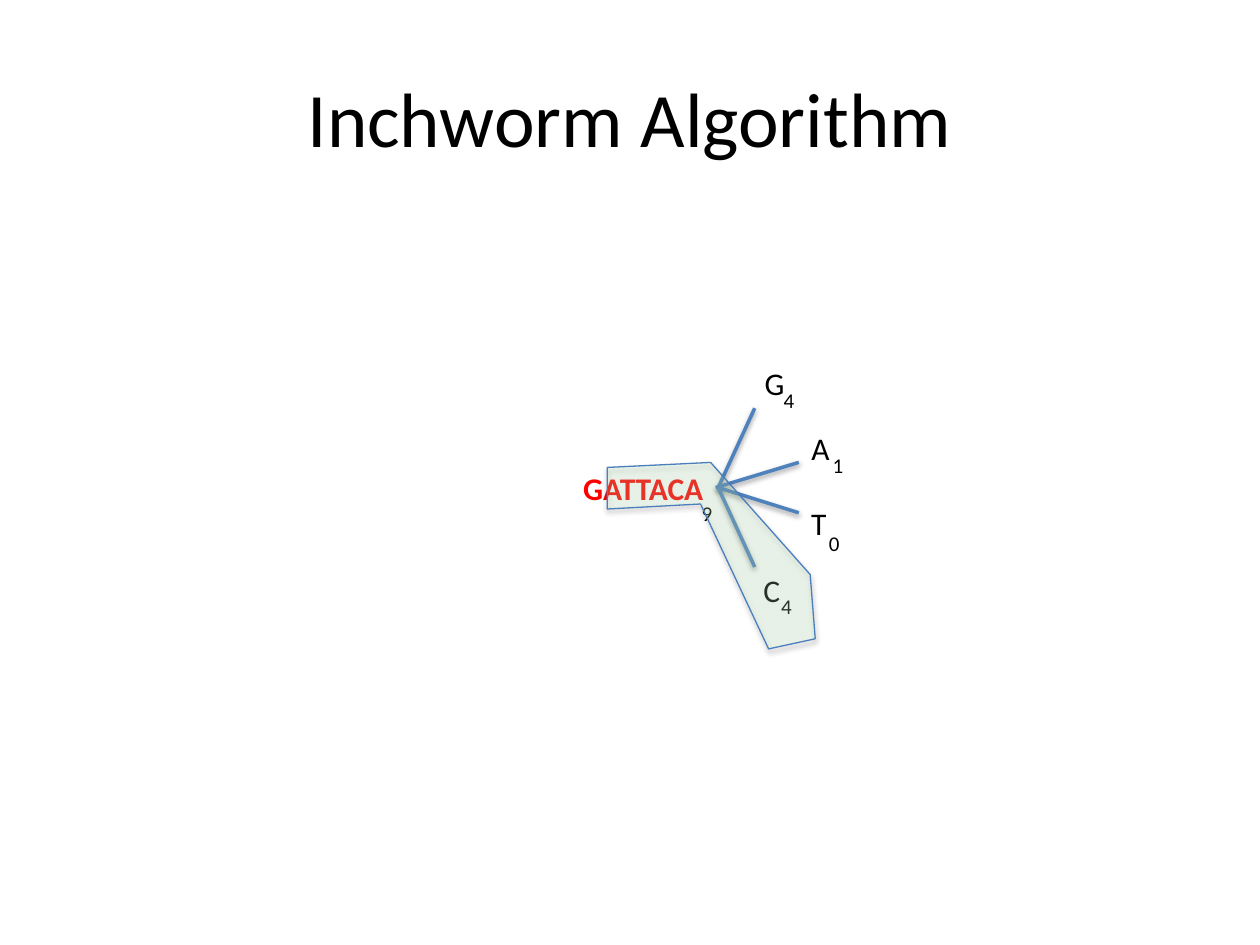
from lxml import etree
from pptx import Presentation
from pptx import util as u
from pptx.dml.color import RGBColor
from pptx.enum import shapes, text
from pptx.oxml.ns import qn

COLORS = {"ink": "000000", "seed": "FF0000", "branch": "4F81BD",
          "path_fill": "CCFFCC", "path_line": "4B7EBC"}
FONT = "Calibri"
TITLE = "Inchworm Algorithm"

BRANCHES = [
    ((5.7, 3.87), (5.99, 3.24)),
    ((5.68, 3.87), (6.34, 3.67)),
    ((5.7, 3.87), (6.34, 4.07)),
    ((5.7, 3.87), (5.99, 4.5)),
]
BASES = [
    ("G", 5.97, 2.84, 0.36),
    ("A", 6.34, 3.36, 0.35),
    ("T", 6.34, 3.95, 0.33),
    ("C", 5.96, 4.48, 0.34),
]
BASE_COUNTS = [("4", 6.12, 3.03), ("1", 6.51, 3.54), ("0", 6.48, 4.16), ("4", 6.1, 4.66)]
SEED = ("GATTACA", 4.53, 3.67, 1.17)
SEED_COUNT = ("9", 5.47, 3.92)
CHOSEN_PATH = [(6.47, 5.07), (6.43, 4.56), (5.64, 3.67), (4.82, 3.71),
               (4.82, 4.04), (5.56, 4), (6.1, 5.15)]


def rgb(name):
    return RGBColor.from_string(COLORS[name])


def add_alpha(color, percent):
    etree.SubElement(color, qn("a:alpha"), val=str(percent * 1000))


def add_shadow(shape, alpha, distance):
    properties = shape._element.spPr
    for old in properties.findall(qn("a:effectLst")):
        properties.remove(old)
    effects = etree.SubElement(properties, qn("a:effectLst"))
    shadow = etree.SubElement(effects, qn("a:outerShdw"), blurRad=str(u.Pt(3.1)),
                              dist=str(u.Pt(distance)), dir="5400000", rotWithShape="0")
    add_alpha(etree.SubElement(shadow, qn("a:srgbClr"), val=COLORS["ink"]), alpha)


def write(frame, wording, size=18, color="ink", bold=False, align=text.PP_ALIGN.LEFT):
    paragraph = frame.paragraphs[0]
    paragraph.alignment = align
    run = paragraph.add_run()
    run.text = wording
    run.font.name = FONT
    run.font.size = u.Pt(size)
    run.font.bold = bold
    run.font.color.rgb = rgb(color)


def add_label(group, wording, left, top, width=0.29, height=0.4, **style):
    box = group.shapes.add_textbox(*map(u.Inches, (left, top, width, height)))
    box.text_frame.word_wrap = False
    box.text_frame.auto_size = text.MSO_AUTO_SIZE.SHAPE_TO_FIT_TEXT
    write(box.text_frame, wording, **style)


def add_count(group, wording, left, top):
    add_label(group, wording, left, top, height=0.3, size=12)


def add_branch(group, start, end):
    branch = group.shapes.add_connector(shapes.MSO_CONNECTOR.STRAIGHT,
                                        *map(u.Inches, start + end))
    branch.line.color.rgb = rgb("branch")
    branch.line.width = u.Pt(2)
    add_shadow(branch, alpha=38, distance=1.6)


def add_chosen_path(slide):
    points = [(u.Inches(x), u.Inches(y)) for x, y in CHOSEN_PATH]
    builder = slide.shapes.build_freeform(*points[0])
    builder.add_line_segments(points[1:], close=True)
    outline = builder.convert_to_shape()
    outline.fill.solid()
    outline.fill.fore_color.rgb = rgb("path_fill")
    add_alpha(outline._element.spPr.find(".//" + qn("a:srgbClr")), 20)
    outline.line.color.rgb = rgb("path_line")
    outline.line.width = u.Pt(0.75)
    add_shadow(outline, alpha=35, distance=1.8)


def main():
    deck = Presentation()
    deck.slide_width, deck.slide_height = u.Inches(10), u.Inches(7.5)
    slide = deck.slides.add_slide(deck.slide_layouts[5])

    title = slide.shapes.title
    title.left, title.top, title.width, title.height = map(u.Inches, (0.5, 0.3, 9, 1.25))
    title.text_frame.vertical_anchor = text.MSO_ANCHOR.MIDDLE
    write(title.text_frame, TITLE, size=44, align=text.PP_ALIGN.CENTER)

    extensions = slide.shapes.add_group_shape()
    for start, end in BRANCHES:
        add_branch(extensions, start, end)
    for base in BASES:
        add_label(extensions, *base)
    for count in BASE_COUNTS:
        add_count(extensions, *count)

    seed = slide.shapes.add_group_shape()
    add_label(seed, *SEED, color="seed", bold=True)
    add_count(seed, *SEED_COUNT)

    add_chosen_path(slide)
    deck.save("out.pptx")


if __name__ == "__main__":
    main()
